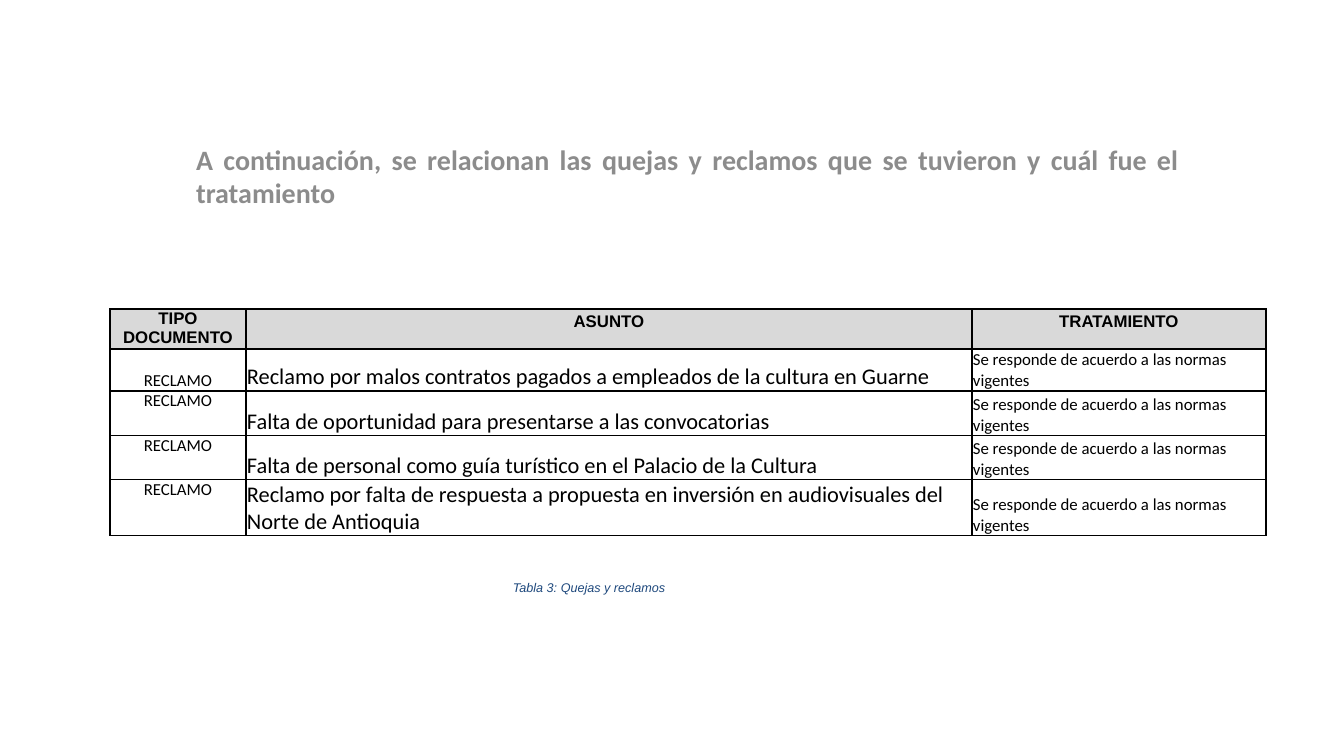
from dataclasses import dataclass

from lxml import etree
from pptx import Presentation
from pptx.dml.color import RGBColor
from pptx.enum.text import MSO_ANCHOR, MSO_AUTO_SIZE, PP_ALIGN
from pptx.oxml.ns import qn
from pptx.util import Emu, Pt

TOP, BOTTOM = MSO_ANCHOR.TOP, MSO_ANCHOR.BOTTOM
LEFT, CENTER, JUSTIFY = PP_ALIGN.LEFT, PP_ALIGN.CENTER, PP_ALIGN.JUSTIFY
NO_FIT = MSO_AUTO_SIZE.NONE

# Content
TITLE = ("A continuación, se relacionan las quejas y reclamos que se tuvieron "
         "y cuál fue el tratamiento")
HEADERS = ["TIPO DOCUMENTO", "ASUNTO", "TRATAMIENTO"]
KIND = "RECLAMO"
TREATMENT = "Se responde de acuerdo a las normas vigentes"
SUBJECTS = [
    "Reclamo por malos contratos pagados a empleados de la cultura en Guarne",
    "Falta de oportunidad para presentarse a las convocatorias",
    "Falta de personal como guía turístico en el Palacio de la Cultura",
    "Reclamo por falta de respuesta a propuesta en inversión en audiovisuales "
    "del Norte de Antioquia",
]
CAPTION = "Tabla 3: Quejas y reclamos"

# Layout in px
SLIDE = (1344, 756)
TITLE_BOX = (186, 137, 1003, 78)
TABLE_AT = (110, 309)
COLS = [136, 726, 294]
ROWS = [40, 41, 45, 44, 55]
CAPTION_BOX = (378, 575, 422, 25)
CENTER_INSETS = (5, 0, 5, 0)
BODY_INSETS = (1, 1, 1, 0)


@dataclass(frozen=True)
class Theme:
    heading: str = "Arial"
    body: str = "Calibri"
    ink: str = "000000"
    title: str = "8C8C8C"
    caption: str = "1F497D"
    header_fill: str = "D9D9D9"
    title_size: int = 20
    subject_size: int = 16
    cell_size: int = 12
    caption_size: int = 9
    border: int = 1


T = Theme()


def px(n):
    return Emu(round(n * 914400 / 100.8))


def write(tf, text, font=T.body, size=T.cell_size, color=T.ink, bold=False,
          italic=False, align=LEFT, spacing=1.0, after=0):
    p = tf.paragraphs[0]
    p.alignment = align
    p.line_spacing = spacing
    p.space_after = Pt(after)
    r = p.add_run()
    r.text = text
    f = r.font
    f.name, f.size, f.bold, f.italic = font, Pt(size), bold, italic
    f.color.rgb = RGBColor.from_string(color)


def add_borders(cell):
    tcPr = cell._tc.get_or_add_tcPr()
    for side in ("lnL", "lnR", "lnT", "lnB"):
        ln = etree.SubElement(tcPr, qn(f"a:{side}"), w=str(Pt(T.border)))
        fill = etree.SubElement(ln, qn("a:solidFill"))
        etree.SubElement(fill, qn("a:srgbClr"), val=T.ink)


def format_cell(cell, insets, anchor, fill=None):
    add_borders(cell)
    (cell.margin_left, cell.margin_top,
     cell.margin_right, cell.margin_bottom) = map(px, insets)
    cell.vertical_anchor = anchor
    if fill:
        cell.fill.solid()
        cell.fill.fore_color.rgb = RGBColor.from_string(fill)
    else:
        cell.fill.background()


def add_complaints_table(s):
    size = (sum(COLS), sum(ROWS))
    table = s.shapes.add_table(len(ROWS), len(COLS),
                               *map(px, TABLE_AT + size)).table
    table.first_row = table.horz_banding = False
    for col, width in zip(table.columns, COLS):
        col.width = px(width)
    for row, height in zip(table.rows, ROWS):
        row.height = px(height)

    # Header row
    for i, text in enumerate(HEADERS):
        cell = table.cell(0, i)
        format_cell(cell, CENTER_INSETS, TOP, T.header_fill)
        write(cell.text_frame, text, font=T.heading, bold=True, align=CENTER,
              spacing=1.15 if i else 1.0)

    # Complaint rows
    for i, subject in enumerate(SUBJECTS, 1):
        kind, topic, treatment = (table.cell(i, c) for c in range(len(COLS)))
        format_cell(kind, CENTER_INSETS, BOTTOM if i == 1 else TOP)
        write(kind.text_frame, KIND, align=CENTER)
        format_cell(topic, BODY_INSETS, BOTTOM)
        write(topic.text_frame, subject, size=T.subject_size)
        format_cell(treatment, BODY_INSETS, BOTTOM)
        write(treatment.text_frame, TREATMENT)


def main():
    prs = Presentation()
    prs.slide_width, prs.slide_height = map(px, SLIDE)
    s = prs.slides.add_slide(prs.slide_layouts[5])

    # Title
    sp = s.shapes.title
    sp.left, sp.top, sp.width, sp.height = map(px, TITLE_BOX)
    tf = sp.text_frame
    tf.word_wrap, tf.auto_size, tf.vertical_anchor = True, NO_FIT, TOP
    write(tf, TITLE, size=T.title_size, color=T.title, bold=True, align=JUSTIFY)

    add_complaints_table(s)

    # Caption
    tf = s.shapes.add_textbox(*map(px, CAPTION_BOX)).text_frame
    tf.word_wrap = True
    write(tf, CAPTION, font=T.heading, size=T.caption_size, color=T.caption,
          italic=True, align=CENTER, after=10)

    prs.save("out.pptx")


if __name__ == "__main__":
    main()
